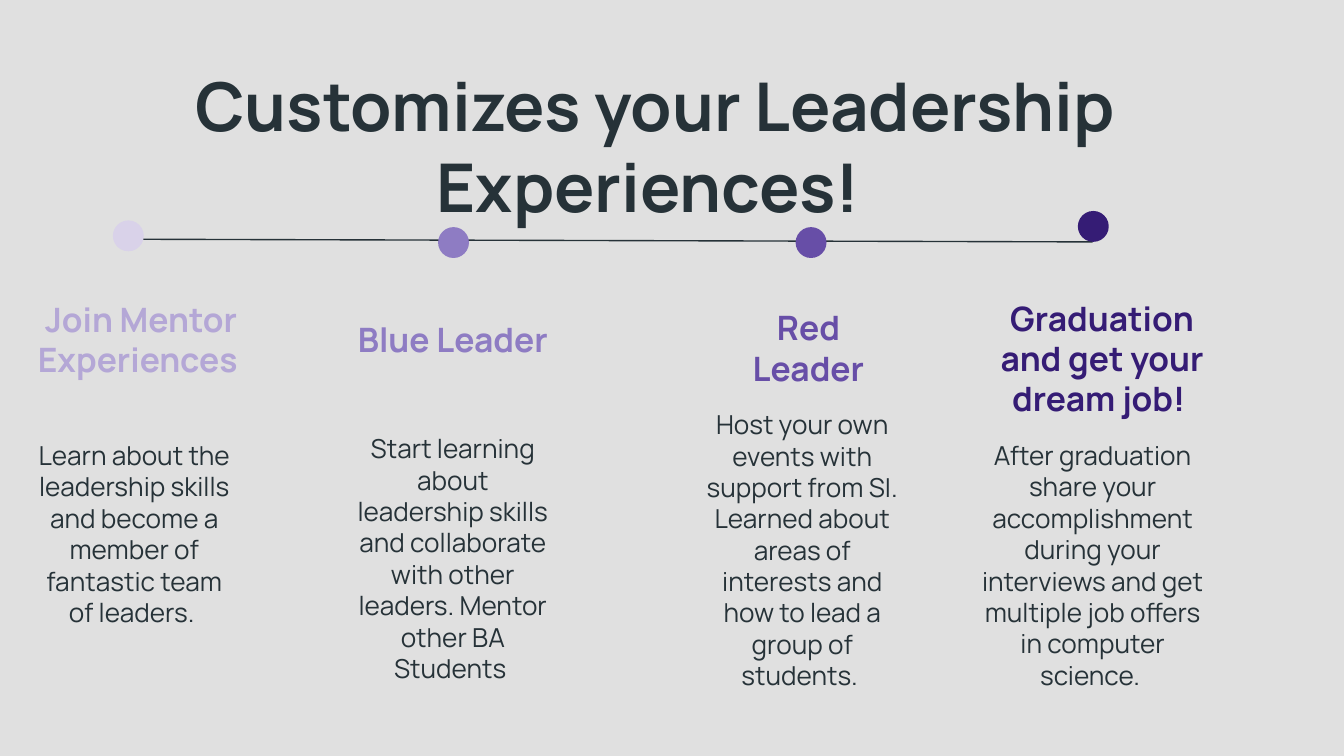
from lxml.etree import SubElement
from pptx import Presentation
from pptx.dml.color import RGBColor
from pptx.enum.shapes import MSO_CONNECTOR, MSO_SHAPE
from pptx.enum.text import MSO_ANCHOR, MSO_AUTO_SIZE, PP_ALIGN
from pptx.oxml.ns import qn
from pptx.util import Inches, Pt

COLORS = {
    "background": "E0E0E0",
    "ink": "263238",
    "pale": "D9D2E9",
    "lilac": "B4A7D6",
    "violet": "8E7CC3",
    "purple": "674EA7",
    "indigo": "351C75",
}
SLIDE_WIDTH = 10
SLIDE_HEIGHT = SLIDE_WIDTH * 9 / 16
TITLE = {"name": "Manrope", "size": Pt(36), "bold": True}
HEADING = {"name": "Manrope", "size": Pt(18), "bold": True}
BODY = {"name": "Manrope", "size": Pt(14), "bold": False}
DOT_SIZE = 0.23
STAGES = [
    {
        "dot": (0.84, 1.64, "pale"),
        "heading": ("Join Mentor Experiences ", (0.13, 2.32, 1.84, 0.41), "lilac"),
        "body": ("Learn about the leadership skills and become a member of "
                 "fantastic team of leaders. ", (0.18, 3.17, 1.64, 0.86)),
    },
    {
        "dot": (3.26, 1.69, "violet"),
        "heading": ("Blue Leader ", (2.55, 2.32, 1.64, 0.41), "violet"),
        "body": ("Start learning about leadership skills and collaborate with "
                 "other leaders. Mentor other BA Students ", (2.55, 3.12, 1.64, 0.86)),
    },
    {
        "dot": (5.92, 1.69, "purple"),
        "heading": ("Red \nLeader ", (4.98, 2.38, 2.12, 0.41), "purple"),
        "body": ("Host your own events with support from SI. Learned about areas of "
                 "interests and how to lead a group of students. ",
                 (5.15, 2.94, 1.64, 0.86)),
    },
    {
        "dot": (8.02, 1.57, "indigo"),
        "heading": ("Graduation and get your dream job! ", (7.19, 2.2, 2.02, 0.93), "indigo"),
        "body": ("After graduation share your accomplishment during your interviews "
                 "and get multiple job offers in computer science. ",
                 (7.17, 3.17, 1.92, 0.86)),
    },
]


def rgb(name):
    """Return the named colour."""
    return RGBColor.from_string(COLORS[name])


def write_text(sp, text, font, color, anchor):
    """Fill a shape with centred, wrapped paragraphs."""
    tf = sp.text_frame
    frame = {"word_wrap": True, "auto_size": MSO_AUTO_SIZE.NONE, "vertical_anchor": anchor}
    frame.update({f"margin_{side}": Inches(0.1) for side in ("left", "top", "right", "bottom")})
    for key, value in frame.items():
        setattr(tf, key, value)
    tf.text = text
    for p in tf.paragraphs:
        p.alignment = PP_ALIGN.CENTER
        for r in p.runs:
            for key, value in font.items():
                setattr(r.font, key, value)
            r.font.color.rgb = rgb(color)


def add_title(s, text, box):
    """Place and format the title placeholder."""
    sp = s.shapes.title
    for key, value in zip(("left", "top", "width", "height"), box):
        setattr(sp, key, Inches(value))
    write_text(sp, text, TITLE, "ink", MSO_ANCHOR.TOP)


def add_text(s, text, box, font, color, anchor):
    """Add a text box."""
    sp = s.shapes.add_textbox(*map(Inches, box))
    write_text(sp, text, font, color, anchor)


def add_line(s, *ends):
    """Add the thin timeline without a shadow."""
    line = s.shapes.add_connector(MSO_CONNECTOR.STRAIGHT, *map(Inches, ends))
    line.line.color.rgb = rgb("ink")
    line.line.width = Pt(0.75)
    SubElement(line._element.spPr, qn("a:effectLst"))


def add_dot(s, left, top, color):
    """Add a round timeline marker."""
    sp = s.shapes.add_shape(MSO_SHAPE.OVAL, *map(Inches, (left, top, DOT_SIZE, DOT_SIZE)))
    sp.shadow.inherit = False
    sp.fill.solid()
    sp.fill.fore_color.rgb = rgb(color)
    sp.line.fill.background()


def add_stage(s, stage):
    """Add one timeline stage with its marker, heading and body."""
    add_dot(s, *stage["dot"])
    text, box, color = stage["heading"]
    add_text(s, text, box, HEADING, color, MSO_ANCHOR.MIDDLE)
    text, box = stage["body"]
    add_text(s, text, box, BODY, "ink", MSO_ANCHOR.TOP)


def main():
    """Build and save the leadership timeline slide."""
    prs = Presentation()
    prs.slide_width, prs.slide_height = Inches(SLIDE_WIDTH), Inches(SLIDE_HEIGHT)
    s = prs.slides.add_slide(prs.slide_layouts[5])
    s.background.fill.solid()
    s.background.fill.fore_color.rgb = rgb("background")
    add_title(s, "Customizes your Leadership Experiences! ", (0.66, 0.38, 8.43, 0.67))
    add_line(s, 0.93, 1.78, 8.13, 1.8)
    for stage in STAGES:
        add_stage(s, stage)
    prs.save("out.pptx")


if __name__ == "__main__":
    main()
